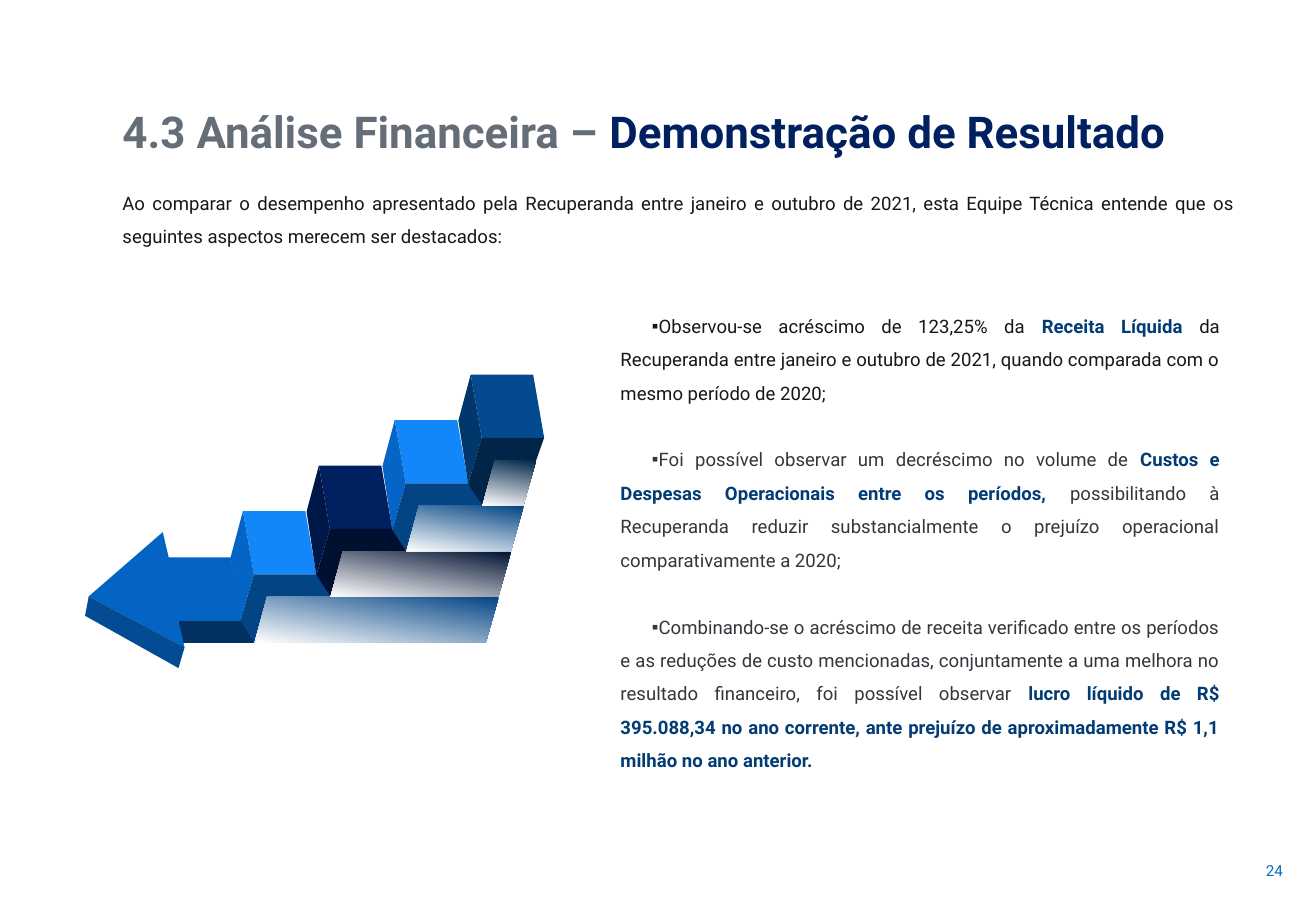
import pptx
import pptx.dml.color
import pptx.enum.text
import pptx.util
from lxml import etree

Pt = pptx.util.Pt
Align = pptx.enum.text.PP_ALIGN
Anchor = pptx.enum.text.MSO_ANCHOR

INK, GREY, BLUE = "181717", "33363C", "033C75"


def color(code):
    return pptx.dml.color.RGBColor.from_string(code)


class Page:
    font = "Roboto"

    def __init__(self, deck):
        self.slide = deck.slides.add_slide(deck.slide_layouts[6])
        self.stairs = self.slide.shapes.add_group_shape()

    def text(self, box, paras, size, align=Align.LEFT, line=None,
             gap=0, mark=None, anchor=Anchor.TOP):
        """Add a text box; each paragraph is a list of (text, colour, bold)."""
        shape = self.slide.shapes.add_textbox(*map(Pt, box))
        frame = shape.text_frame
        frame.word_wrap = True
        frame.vertical_anchor = anchor
        for i, runs in enumerate(paras):
            para = frame.add_paragraph() if i else frame.paragraphs[0]
            para.alignment = align
            if line:
                para.line_spacing = line
            if i:
                para.space_before = Pt(gap)
            if mark:
                self.bullet(para, mark)
            for words, tone, bold in runs:
                run = para.add_run()
                run.text = words
                run.font.name = self.font
                run.font.size = Pt(size)
                run.font.bold = bold
                run.font.color.rgb = color(tone)

    def bullet(self, para, mark):
        props = para._p.get_or_add_pPr()
        props.set("marL", "0")
        props.set("indent", str(Pt(18.7)))
        space = props.nsmap["a"]
        for tag, key, value in (("buFont", "typeface", "Arial"),
                                ("buChar", "char", mark)):
            etree.SubElement(props, f"{{{space}}}{tag}").set(key, value)

    def face(self, points, tone, fade=False):
        """Add one flat side of the staircase, fading to white if asked."""
        spots = [(Pt(x), Pt(y)) for x, y in points]
        path = self.stairs.shapes.build_freeform(*spots[0])
        path.add_line_segments(spots[1:], close=True)
        shape = path.convert_to_shape()
        shape.shadow.inherit = False
        shape.line.fill.background()
        if fade:
            shape.fill.gradient()
            shape.fill.gradient_angle = 260
            for stop, code in zip(shape.fill.gradient_stops, (tone, "FFFFFF")):
                stop.color.rgb = color(code)
        else:
            shape.fill.solid()
            shape.fill.fore_color.rgb = color(tone)

    def step(self, i, top, side, front, last):
        left, up = 144 + 45 * i, 303 - 27 * i
        edge = 288 + 7.4 * i - left
        end = edge + 7.7 if last else 52
        faces = [
            ([(0, 0), (37, 0), (43.5, 37.5), (6.5, 37.5)], top),
            ([(-7.3, 27.3), (0, 0), (6.5, 37.5), (-1.5, 65)], side),
            ([(43.5, 37.5), (6.5, 37.5), (-1.5, 65), (7, 77.7),
              (14.3, 50.7), (end, 50.7)], front),
            ([(7, 77.7), (edge, 77.7), (edge + 7.7, 50.7), (14.3, 50.7)], front),
        ]
        for n, (points, tone) in enumerate(faces):
            self.face([(left + x, up + y) for x, y in points], tone, n == 3)

    def arrow(self):
        tip, low, heel, bend = (52.6, 353.5), (109.4, 383.8), (105.8, 368), (143.3, 368)
        self.face([bend, heel, (105.8, 381), (151.2, 381)], "023262")
        self.face([low, tip, (96.5, 315.4), (100, 330.4), (136.8, 330.4),
                   bend, heel], "0464C4")
        self.face([(105.8, 396), low, tip, (50.4, 365)], "034B93")


def main():
    deck = pptx.Presentation()
    deck.slide_width, deck.slide_height = Pt(780), Pt(540)
    page = Page(deck)

    page.text((710.6, 498.2, 56.9, 36), [[("24", "0070C0", False)]], 9,
              Align.RIGHT, anchor=Anchor.MIDDLE)
    page.text((65.5, 58.3, 674, 38.9),
              [[("4.3 Análise Financeira – ", "656D78", True),
                ("Demonstração de Resultado", "002060", True)]], 26)
    page.text((65.5, 103.7, 674, 45.4),
              [[("Ao comparar o desempenho apresentado pela Recuperanda entre "
                 "janeiro e outubro de 2021, esta Equipe Técnica entende que os "
                 "seguintes aspectos merecem ser destacados:", INK, False)]],
              11, Align.JUSTIFY, 1.5)

    points = [
        [("Observou-se acréscimo de 123,25% da ", INK, False),
         ("Receita Líquida ", BLUE, True),
         ("da Recuperanda entre janeiro e outubro de 2021, quando comparada "
          "com o mesmo período de 2020;", INK, False)],
        [("Foi possível observar um decréscimo no volume de ", GREY, False),
         ("Custos e Despesas Operacionais entre os períodos, ", BLUE, True),
         ("possibilitando à Recuperanda reduzir substancialmente o prejuízo "
          "operacional comparativamente a 2020;", GREY, False)],
        [("Combinando-se o acréscimo de receita verificado entre os períodos e "
          "as reduções de custo mencionadas, conjuntamente a uma melhora no "
          "resultado financeiro, foi possível observar ", GREY, False),
         ("lucro líquido de R$ 395.088,34 no ano corrente, ante prejuízo de "
          "aproximadamente R$ 1,1 milhão no ano anterior.", BLUE, True)],
    ]
    page.text((360.7, 176.4, 369.4, 284), points, 11, Align.JUSTIFY, 1.5,
              gap=19.8, mark="▪")

    page.arrow()
    light = ("1387FA", "0465C6", "034484")
    steps = [light, ("002060", "001848", "001030"), light,
             ("034A90", "02376C", "012548")]
    for i, tones in enumerate(steps):
        page.step(i, *tones, last=i == len(steps) - 1)

    deck.save("out.pptx")


if __name__ == "__main__":
    main()
